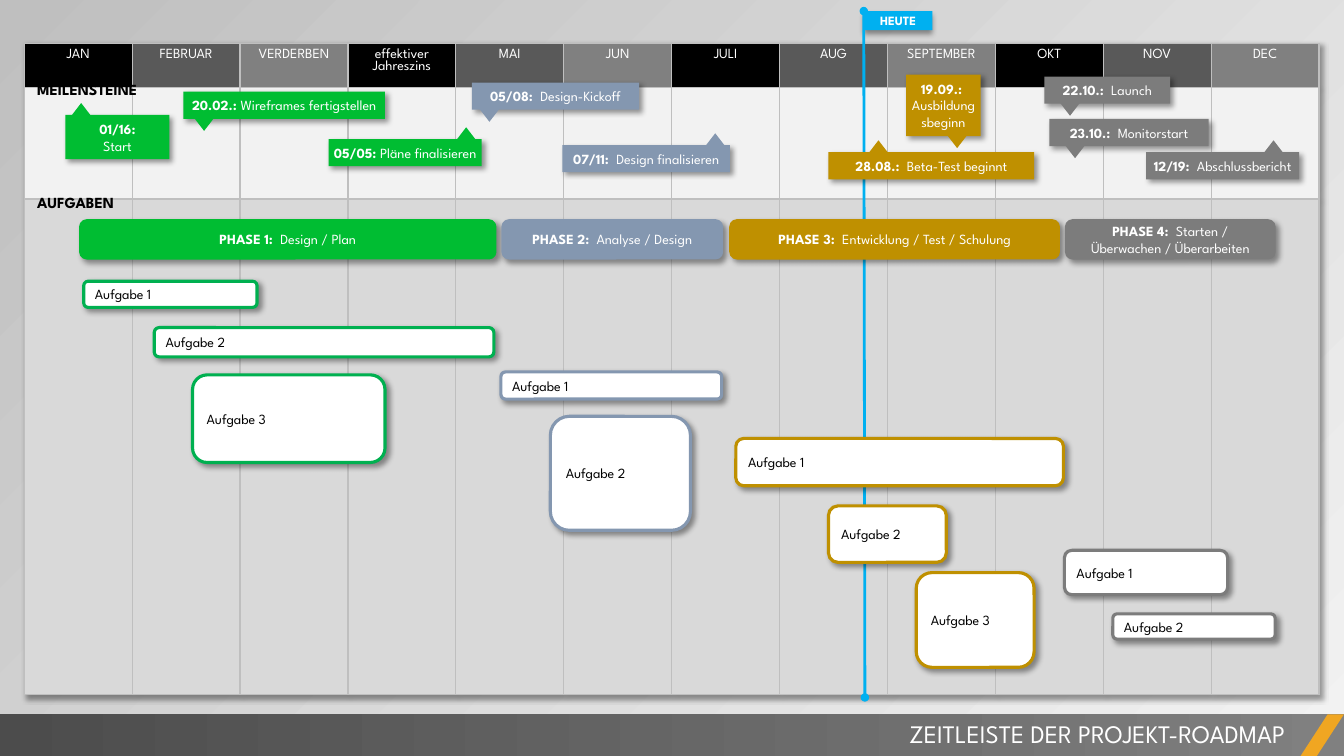
from lxml.etree import SubElement
from pptx import Presentation
from pptx.dml.color import RGBColor
from pptx.enum.shapes import MSO_CONNECTOR, MSO_SHAPE
from pptx.enum.text import MSO_ANCHOR, PP_ALIGN
from pptx.oxml.ns import qn
from pptx.util import Pt

FONT = "League Spartan"
COLORS = {
    "black": "000000", "white": "FFFFFF", "dark": "595959", "mid": "808080",
    "grid": "BFBFBF", "light": "F2F2F2", "body": "D9D9D9", "footer": "4C4C4C",
    "accent": "F0A622", "today": "00B0F0", "green": "00BD32", "leaf": "00B050",
    "blue": "8497B0", "gold": "BF9000", "gray": "7C7C7C",
}
MONTHS = ["JAN", "FEBRUAR", "VERDERBEN", "effektiver Jahreszins", "MAI", "JUN",
          "JULI", "AUG", "SEPTEMBER", "OKT", "NOV", "DEC"]

# Left, width, colour, label, text
PHASES = [
    (57.6, 295.9, "green", "PHASE 1:  ", "Design / Plan"),
    (359.3, 156.2, "blue", "PHASE 2:  ", "Analyse / Design"),
    (522, 234, "gold", "PHASE 3:  ", "Entwicklung / Test / Schulung"),
    (761.8, 148.3, "gray", "PHASE 4:  ", "Starten / Überwachen / Überarbeiten"),
]
# Left, top, width, height, tip left, tip points up, colour, paragraphs of (date, text)
MILESTONES = [
    (234.7, 99.4, 109.4, 19.4, 324.7, True, "green", [("05/05: ", "Pläne finalisieren")]),
    (46.8, 82.1, 74.2, 31.7, 49.7, True, "green", [("01/16:", ""), ("", "Start")]),
    (131, 65.5, 144, 19.4, 137.5, False, "green", [("20.02.: ", "Wireframes fertigstellen")]),
    (337, 59, 119.5, 19.4, 341.3, False, "blue", [("05/08:  ", "Design-Kickoff")]),
    (401.8, 103.7, 119.5, 19.4, 502.6, True, "blue", [("07/11:  ", "Design finalisieren")]),
    (647.3, 53.3, 53.3, 43.9, 675.4, False, "gold", [("19.09.:  ", "Ausbildungsbeginn")]),
    (591.8, 108.7, 146.9, 19.4, 619.2, True, "gold", [("28.08.:  ", "Beta-Test beginnt")]),
    (745.9, 54.7, 90, 19.4, 756, False, "gray", [("22.10.:  ", "Launch")]),
    (749.5, 85, 113.8, 19.4, 759.6, False, "gray", [("23.10.:  ", "Monitorstart")]),
    (818.6, 108.7, 109.4, 19.4, 901.4, True, "gray", [("12/19:  ", "Abschlussbericht")]),
]
# Left, top, width, height, outline colour, number
TASKS = [
    (59.8, 200.9, 123.8, 18.7, "leaf", 1),
    (110.2, 234, 242.6, 20.9, "leaf", 2),
    (137.5, 267.8, 137.5, 62.6, "leaf", 3),
    (357.8, 265.7, 157.7, 19.4, "blue", 1),
    (393.1, 297.4, 100.1, 81.4, "blue", 2),
    (525.6, 313.2, 234, 33.8, "gold", 1),
    (591.8, 361.4, 84.2, 40.3, "gold", 2),
    (654.5, 409, 84.2, 67.7, "gold", 3),
    (760.3, 393.1, 116.6, 31.7, "gray", 1),
    (794.9, 438.5, 115.9, 18, "gray", 2),
]


def color(name):
    return RGBColor.from_string(COLORS[name])


def style_para(para, size, name, bold=False, align=PP_ALIGN.LEFT):
    para.alignment = align
    for span in para.runs:
        span.font.name = FONT
        span.font.size = Pt(size)
        span.font.bold = bold
        span.font.color.rgb = color(name)


def write_labelled(para, label, text):
    """Centred white paragraph with a bold label before plain text."""
    for part in filter(None, (label, text)):
        para.add_run().text = part
    style_para(para, 10, "white", align=PP_ALIGN.CENTER)
    if label:
        para.runs[0].font.bold = True


def blend(fill, first, last, angle):
    fill.gradient()
    fill.gradient_angle = angle
    for stop, name in zip(fill.gradient_stops, (first, last)):
        stop.color.rgb = color(name)


def add_shadow(effects, degrees=45):
    shadow = SubElement(effects, qn("a:outerShdw"), blurRad=str(Pt(4)), dist=str(Pt(3)),
                        dir=str(degrees * 60000), algn="tl", rotWithShape="0")
    tint = SubElement(shadow, qn("a:srgbClr"), val=COLORS["black"])
    SubElement(tint, qn("a:alpha"), val="40000")


def add_box(shapes, kind, place, fill, outline=None, shadow=None):
    box = shapes.add_shape(kind, *map(Pt, place))
    box.shadow.inherit = False
    box.fill.solid()
    box.fill.fore_color.rgb = color(fill)
    if outline:
        box.line.color.rgb = color(outline)
        box.line.width = Pt(2.25)
    else:
        box.line.fill.background()
    if shadow is not None:
        add_shadow(box.element.spPr.find(qn("a:effectLst")), shadow)
    box.text_frame.vertical_anchor = MSO_ANCHOR.MIDDLE
    return box


def add_label(page, place, text, size, name, bold=False, align=PP_ALIGN.LEFT):
    label = page.shapes.add_textbox(*map(Pt, place))
    label.text_frame.word_wrap = True
    label.text_frame.text = text
    style_para(label.text_frame.paragraphs[0], size, name, bold, align)


def fill_cell(cell, name):
    properties = cell._tc.get_or_add_tcPr()
    for side in ("lnL", "lnR", "lnT", "lnB"):
        border = SubElement(properties, qn(f"a:{side}"), w=str(Pt(1)))
        SubElement(SubElement(border, qn("a:solidFill")), qn("a:srgbClr"), val=COLORS["grid"])
    cell.fill.solid()
    cell.fill.fore_color.rgb = color(name)


def add_calendar(page):
    heights = (20.9, 79.9, 354.2)
    table = page.shapes.add_table(len(heights), len(MONTHS), Pt(17.3), Pt(31),
                                  Pt(925.2), Pt(sum(heights))).table
    table.first_row = table.horz_banding = False
    effects = SubElement(table._tbl.tblPr, qn("a:effectLst"))
    table._tbl.tblPr.insert(0, effects)
    add_shadow(effects)
    for row, height in zip(table.rows, heights):
        row.height = Pt(height)
    for index, month in enumerate(MONTHS):
        table.columns[index].width = Pt(77.1)
        head = table.cell(0, index)
        head.text_frame.text = month
        style_para(head.text_frame.paragraphs[0], 10, "white", align=PP_ALIGN.CENTER)
        for row, name in enumerate((("black", "dark", "mid")[index % 3], "light", "body")):
            fill_cell(table.cell(row, index), name)


def add_today(page):
    shapes = page.shapes.add_group_shape().shapes
    flag = add_box(shapes, MSO_SHAPE.RECTANGLE, (617, 7.9, 49, 13.7), "today", shadow=90)
    flag.text_frame.text = "HEUTE"
    style_para(flag.text_frame.paragraphs[0], 9, "white", True, PP_ALIGN.CENTER)
    marker = shapes.add_connector(MSO_CONNECTOR.STRAIGHT, Pt(617), Pt(7.9), Pt(617.8), Pt(498.2))
    marker.line.color.rgb = color("today")
    marker.line.width = Pt(2)
    properties = marker.element.spPr
    for end in ("headEnd", "tailEnd"):
        SubElement(properties.find(qn("a:ln")), qn(f"a:{end}"), type="oval")
    SubElement(properties, qn("a:effectLst"))


def add_phase(page, left, width, name, label, text):
    bar = add_box(page.shapes, MSO_SHAPE.ROUNDED_RECTANGLE, (left, 157.7, width, 26.6),
                  name, name, 45)
    write_labelled(bar.text_frame.paragraphs[0], label, text)


def add_milestone(page, left, top, width, height, tip_left, up, name, lines):
    shapes = page.shapes.add_group_shape().shapes
    box = add_box(shapes, MSO_SHAPE.RECTANGLE, (left, top, width, height), name, shadow=45)
    frame = box.text_frame
    frame.margin_left = frame.margin_right = frame.margin_top = frame.margin_bottom = Pt(3.6)
    for index, line in enumerate(lines):
        write_labelled(frame.add_paragraph() if index else frame.paragraphs[0], *line)
    tip_top = top - 8.5 if up else top + height - 2.2
    tip = add_box(shapes, MSO_SHAPE.ISOSCELES_TRIANGLE, (tip_left, tip_top, 16.6, 10.8), name)
    tip.rotation = 0 if up else 180


def add_task(page, left, top, width, height, name, number):
    box = add_box(page.shapes, MSO_SHAPE.ROUNDED_RECTANGLE, (left, top, width, height),
                  "white", name, 45)
    box.text_frame.text = f"Aufgabe {number}"
    style_para(box.text_frame.paragraphs[0], 10, "black")


def main():
    deck = Presentation()
    deck.slide_width, deck.slide_height = Pt(960), Pt(540)
    page = deck.slides.add_slide(deck.slide_layouts[6])
    blend(page.background.fill, "light", "grid", 135)

    # Footer with title
    footer = add_box(page.shapes, MSO_SHAPE.RECTANGLE, (0, 510.2, 960, 29.8), "footer")
    blend(footer.fill, "footer", "mid", 0)
    slash = add_box(page.shapes, MSO_SHAPE.PARALLELOGRAM, (929, 510.2, 31, 29.8), "accent")
    slash.adjustments[0] = 0.65
    add_label(page, (378, 509.8, 547.2, 28.8), "ZEITLEISTE DER PROJEKT-ROADMAP", 18,
              "white", align=PP_ALIGN.RIGHT)

    # Calendar and today marker
    add_calendar(page)
    add_today(page)

    # Phases, milestones and tasks
    for phase in PHASES:
        add_phase(page, *phase)
    for top, text in ((54, "MEILENSTEINE"), (134.6, "AUFGABEN")):
        add_label(page, (19.4, top, 95.8, 20.9), text, 11, "black", True)
    for milestone in MILESTONES:
        add_milestone(page, *milestone)
    for task in TASKS:
        add_task(page, *task)
    deck.save("out.pptx")


if __name__ == "__main__":
    main()
